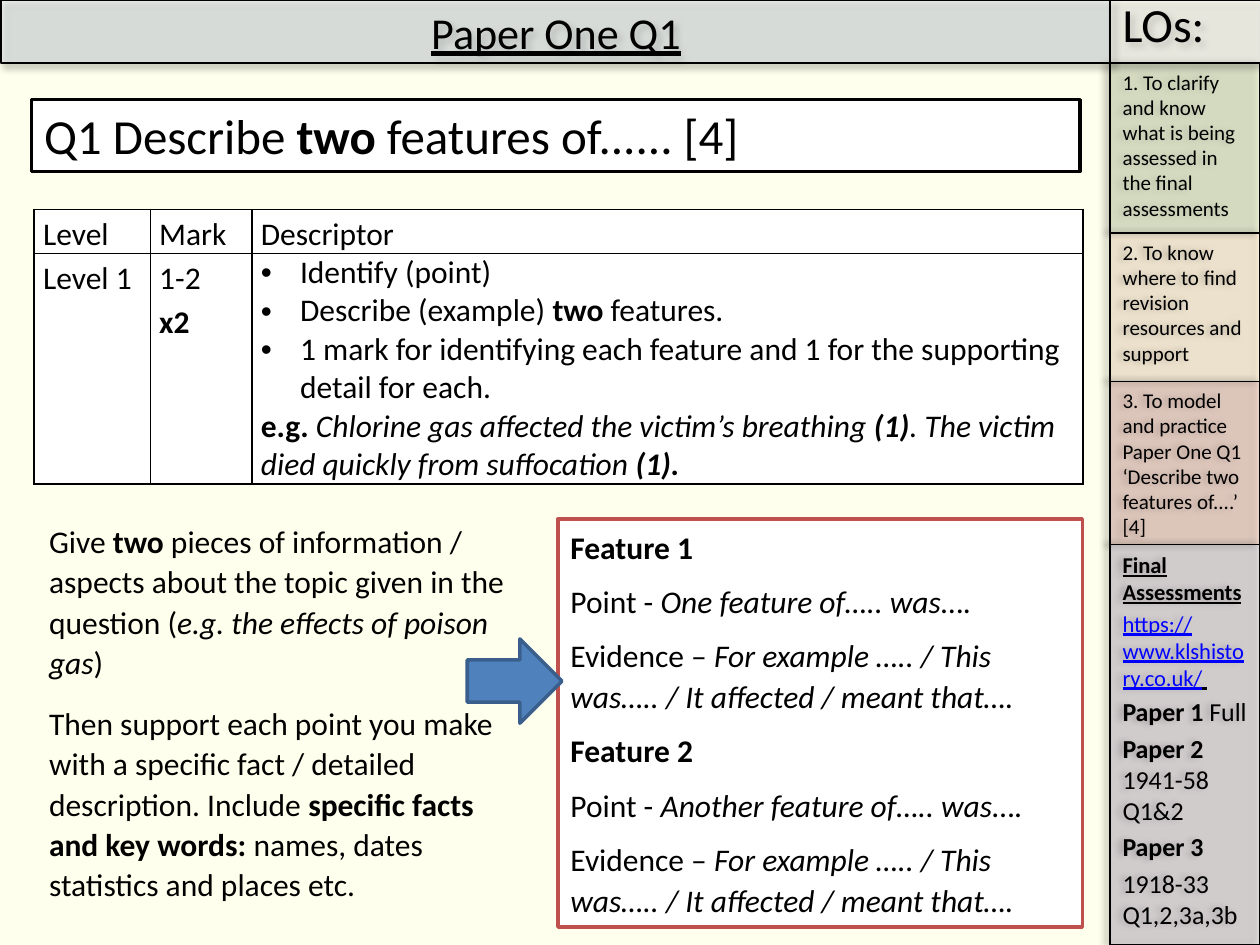
"""Build the Paper One Q1 revision slide."""
from dataclasses import dataclass
from typing import Optional

from lxml import etree
from pptx import Presentation
from pptx import util as u
from pptx.dml.color import RGBColor
from pptx.enum import shapes, text
from pptx.oxml import ns


@dataclass(frozen=True)
class Theme:
    font: str = "Calibri"
    ink: str = "000000"
    paper: str = "FFFFFF"
    back: str = "FFFFED"
    link: str = "0000FF"
    red: str = "C0504D"
    blue: str = "4F81BD"
    edge: str = "3A5F8C"
    green: str = "D7E4BD"
    tan: str = "FCD5B5"
    pink: str = "D99694"
    lilac: str = "B3A2C7"
    sky: str = "DCE6F2"
    title: float = 25.2
    goals: float = 27.2
    task: float = 28
    body: float = 18
    goal: float = 12
    head: float = 12.9
    note: float = 14.8


T = Theme()


@dataclass(frozen=True)
class Para:
    runs: tuple
    size: float = T.body
    space: Optional[float] = None
    before: float = 0
    after: float = 0
    under: bool = False
    centre: bool = False
    bullet: bool = False


@dataclass(frozen=True)
class Box:
    left: float
    top: float
    width: float
    height: float
    fill: str
    paras: tuple = ()
    line: str = T.ink
    weight: float = 2
    alpha: int = 100
    angle: Optional[int] = None
    middle: bool = False
    kind: int = shapes.MSO_SHAPE.RECTANGLE


def rgb(code: str) -> RGBColor:
    return RGBColor.from_string(code)


def add(parent, tag: str, **attrs):
    return etree.SubElement(parent, ns.qn(tag), {k: str(v) for k, v in attrs.items()})


def write(frame, paras: tuple) -> None:
    frame.word_wrap = True
    for i, item in enumerate(paras):
        para = frame.add_paragraph() if i else frame.paragraphs[0]
        if item.bullet:
            props = para._p.get_or_add_pPr()
            props.set("marL", str(u.Cm(0.79)))
            props.set("indent", str(-u.Cm(0.79)))
            add(props, "a:buFont", typeface="Arial")
            add(props, "a:buChar", char="•")
        if item.space:
            para.line_spacing = item.space
        para.space_before = u.Pt(item.before if i else 0)
        para.space_after = u.Pt(item.after)
        para.alignment = text.PP_ALIGN.CENTER if item.centre else text.PP_ALIGN.LEFT
        font = para.font
        font.name, font.size, font.underline = T.font, u.Pt(item.size), item.under
        font.color.rgb = rgb(T.ink)
        for words, style in item.runs:
            run = para.add_run()
            run.text = words
            if "b" in style:
                run.font.bold = True
            if "i" in style:
                run.font.italic = True
            if "l" in style:
                run.font.color.rgb = rgb(T.link)


def draw(slide, box: Box) -> None:
    shape = slide.shapes.add_shape(
        box.kind, u.Cm(box.left), u.Cm(box.top), u.Cm(box.width), u.Cm(box.height))
    shape.fill.solid()
    shape.fill.fore_color.rgb = rgb(box.fill)
    shape.line.color.rgb = rgb(box.line)
    shape.line.width = u.Pt(box.weight)
    shape.shadow.inherit = False
    props = shape._element.spPr
    if box.alpha < 100:
        add(props.find(ns.qn("a:solidFill"))[0], "a:alpha", val=box.alpha * 1000)
    if box.angle is not None:
        shade = add(props.find(ns.qn("a:effectLst")), "a:outerShdw", blurRad=u.Pt(4),
                    dist=u.Pt(3), dir=box.angle * 60000, algn="t", rotWithShape=0)
        add(add(shade, "a:srgbClr", val=T.ink), "a:alpha", val=40000)
    if box.paras:
        frame = shape.text_frame
        frame.vertical_anchor = text.MSO_ANCHOR.MIDDLE if box.middle else text.MSO_ANCHOR.TOP
        frame.margin_right = u.Cm(0.23)
        write(frame, box.paras)


def grid(slide, rows: tuple) -> None:
    table = slide.shapes.add_table(
        2, 3, u.Cm(0.69), u.Cm(4.22), u.Cm(21.14), u.Cm(5.54)).table
    table.first_row = table.horz_banding = False
    for col, width in zip(table.columns, (2.34, 2.05, 16.75)):
        col.width = u.Cm(width)
    for row, height, cells in zip(table.rows, (0.89, 4.65), rows):
        row.height = u.Cm(height)
        for cell, paras in zip(row.cells, cells):
            cell.margin_left = cell.margin_right = u.Cm(0.18)
            cell.margin_top = cell.margin_bottom = 0
            write(cell.text_frame, paras)
            props = cell._tc.get_or_add_tcPr()
            for side in "LRTB":
                line = add(props, f"a:ln{side}", w=u.Pt(1))
                add(add(line, "a:solidFill"), "a:srgbClr", val=T.ink)
            cell.fill.solid()
            cell.fill.fore_color.rgb = rgb(T.paper)


def plain(words: str, **kind) -> Para:
    return Para(((words, ""),), **kind)


def side(top: float, height: float, fill: str, alpha: int, *paras: Para) -> Box:
    return Box(22.38, top, 3.02, height, fill, paras, weight=0.75, alpha=alpha, angle=180)


def guide(*runs: tuple, before: float = 0) -> Para:
    return Para(runs, space=1.07, before=before, after=8)


def note(*runs: tuple) -> Para:
    return Para(runs, T.note, before=3)


def model(count: int, point: str) -> tuple:
    return (
        guide((f"Feature {count}", "b")),
        guide(("Point - ", ""), (f"{point} feature of….. was", "i"), ("….", "")),
        guide(("Evidence – ", ""),
              ("For example ….. / This was….. / It affected / meant that….", "i")))


def main() -> None:
    deck = Presentation()
    deck.slide_width, deck.slide_height = u.Cm(25.4), u.Cm(19.05)
    slide = deck.slides.add_slide(deck.slide_layouts[6])
    slide.background.fill.solid()
    slide.background.fill.fore_color.rgb = rgb(T.back)
    goals = (
        side(1.27, 3.43, T.green, 44, plain(
            "1. To clarify and know what is being assessed in the final assessments", size=T.goal)),
        side(4.7, 2.99, T.tan, 25, plain(
            "2. To know where to find revision resources and support", size=T.goal)),
        Box(0.02, 0, 22.36, 1.27, T.sky, (
            plain("Paper One Q1", size=T.title, under=True, centre=True),),
            weight=0.75, alpha=42, angle=45, middle=True),
        Box(22.38, 0, 3.04, 1.27, T.paper, (plain("LOs:", size=T.goals, space=0.8),),
            weight=0.75, alpha=42, angle=45),
        side(7.69, 3.29, T.pink, 33, plain(
            "3. To model and practice Paper One Q1 ‘Describe two features of....’ [4]",
            size=T.goal)),
        side(10.98, 8.07, T.lilac, 31,
             Para((("Final Assessments", "b"),), T.head, under=True),
             Para((("https://www.klshistory.co.uk/", "l"), (" ", "")), T.head,
                  before=2.6, under=True),
             note(("Paper 1 ", "b"), ("Full", "")),
             note(("Paper 2", "b"), (" 1941-58 Q1&2", "")),
             note(("Paper 3", "b")),
             note(("1918-33 Q1,2,3a,3b", ""))))
    for box in goals:
        draw(slide, box)
    tips = slide.shapes.add_textbox(u.Cm(0.74), u.Cm(10.34), u.Cm(9.86), u.Cm(8.4))
    write(tips.text_frame, (
        guide(("Give ", ""), ("two", "b"),
              (" pieces of information / aspects about the topic given in the question (", ""),
              ("e.g. the effects of poison gas", "i"), (")", "")),
        guide(("Then support each point you make with a specific fact / detailed "
               "description. Include ", ""), ("specific facts and key words: ", "b"),
              ("names, dates statistics and places etc.", ""), before=3.6)))
    marks = (
        plain("Identify (point)", bullet=True),
        Para((("Describe (example) ", ""), ("two", "b"), (" features.", "")), bullet=True),
        plain("1 mark for identifying each feature and 1 for the supporting detail for each.",
              bullet=True),
        Para((("e.g. ", "b"), ("Chlorine gas affected the victim’s breathing ", "i"),
              ("(1)", "bi"), (". The victim died quickly from suffocation ", "i"),
              ("(1).", "bi"))))
    grid(slide, (
        tuple((plain(name, space=1.15),) for name in ("Level", "Mark", "Descriptor")),
        ((plain("Level 1", space=1.15),),
         (plain("1-2", space=1.15), Para((("x2", "b"),), space=1.15)), marks)))
    task = Para((("Q1 Describe ", ""), ("two", "b"), (" features of...... [4]", "")), T.task)
    draw(slide, Box(0.64, 2.01, 21.13, 1.45, T.paper, (task,)))
    draw(slide, Box(11.25, 10.46, 10.57, 8.23, T.paper,
                    model(1, "One") + model(2, "Another"), line=T.red))
    draw(slide, Box(9.42, 12.88, 1.91, 1.7, T.blue, line=T.edge,
                    kind=shapes.MSO_SHAPE.RIGHT_ARROW))
    deck.save("out.pptx")


if __name__ == "__main__":
    main()
